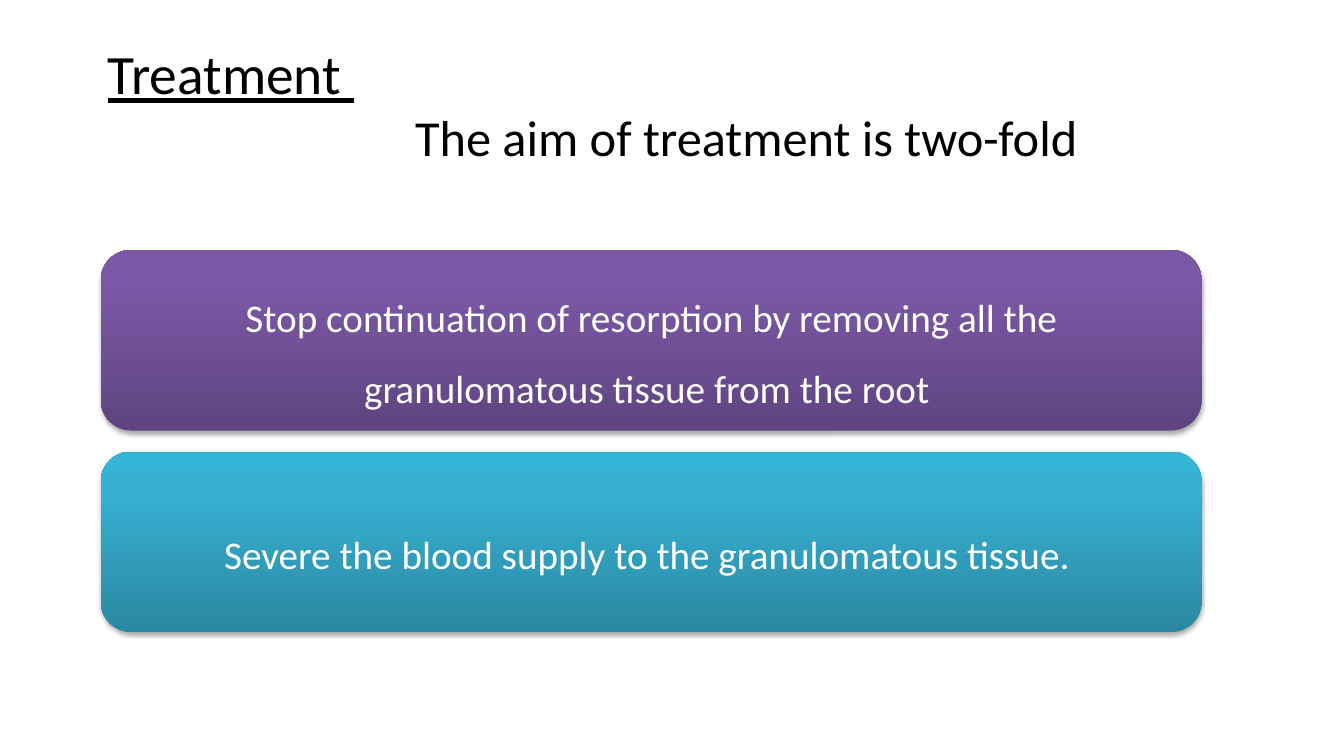
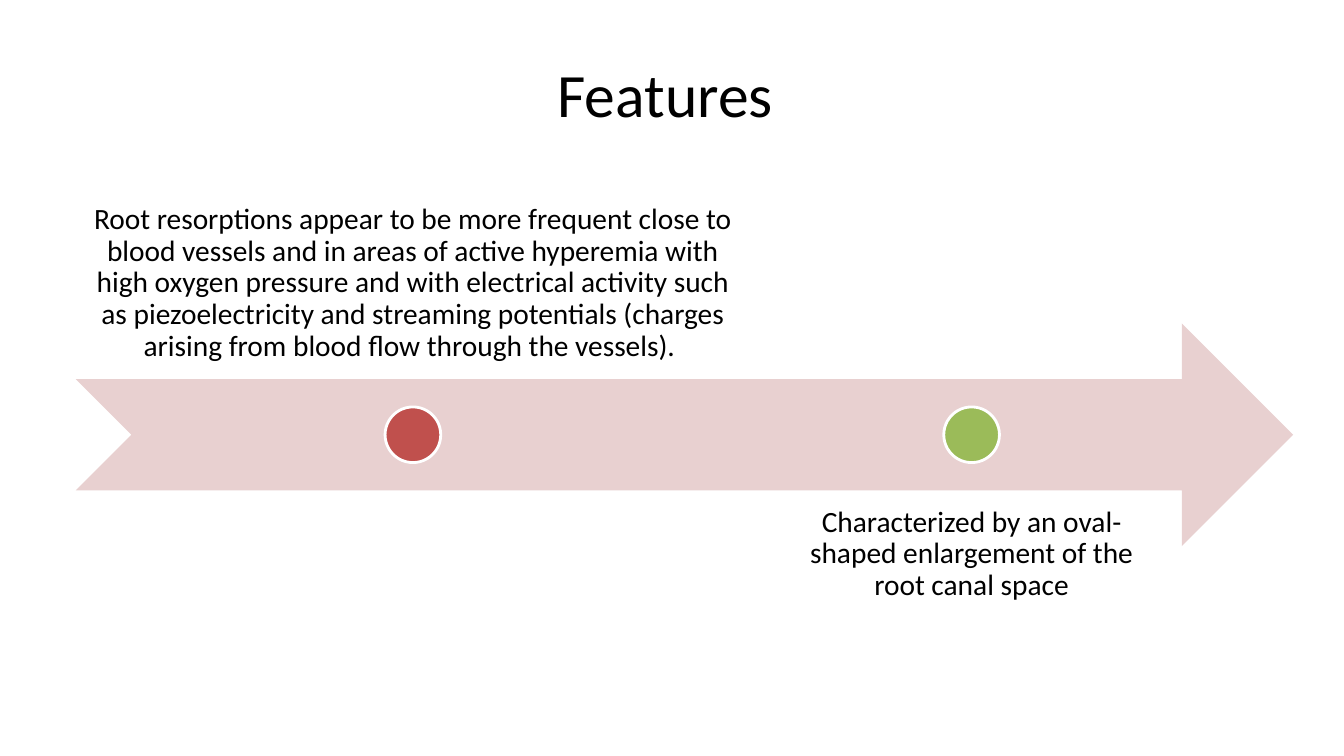
from copy import deepcopy

from lxml.etree import SubElement
from pptx import Presentation
from pptx.dml.color import RGBColor
from pptx.enum.shapes import MSO_SHAPE as Shape
from pptx.enum.text import MSO_ANCHOR as Anchor, PP_ALIGN as Align
from pptx.oxml.ns import qn
from pptx.util import Cm, Pt

FONT = "Calibri"
COLORS = {
    "text": "000000",
    "white": "FFFFFF",
    "arrow": "E8D0D0",
    "red": "C0504D",
    "green": "9BBB59",
}
GRADIENTS = {
    "purple": ((0, "5F4480"), (0.8, "7B58A6"), (1, "7C57A8")),
    "teal": ((0, "2A88A2"), (0.8, "37B1D2"), (1, "34B4D6")),
}


def rgb(name):
    """Return the palette colour with this name."""
    return RGBColor.from_string(COLORS[name])


def write(tf, text, size=21, color="text", align=Align.CENTER, anchor=Anchor.MIDDLE,
          spacing=None, inset=None, underline=None, wrap=True):
    """Put one formatted paragraph into a text frame."""
    tf.word_wrap = wrap
    tf.vertical_anchor = anchor
    if inset is not None:
        tf.margin_left = tf.margin_right = tf.margin_top = tf.margin_bottom = Cm(inset)
    p = tf.paragraphs[0]
    p.alignment = align
    p.line_spacing = spacing
    r = p.add_run()
    r.text = text
    r.font.name = FONT
    r.font.size = Pt(size)
    r.font.underline = underline
    r.font.color.rgb = rgb(color)


def add_text(slide, box, text, **fmt):
    """Add a text box at left, top, width, height in centimetres."""
    write(slide.shapes.add_textbox(*map(Cm, box)).text_frame, text, **fmt)


def add_shape(slide, kind, box, fill=None, line=None):
    """Add a shape without shadow, with an optional solid fill and outline."""
    sp = slide.shapes.add_shape(kind, *map(Cm, box))
    sp.shadow.inherit = False
    if fill:
        sp.fill.solid()
        sp.fill.fore_color.rgb = rgb(fill)
    if line:
        sp.line.color.rgb = rgb(line)
        sp.line.width = Pt(2)
    else:
        sp.line.fill.background()
    return sp


def fill_gradient(sp, stops):
    """Fill a shape with a three-stop gradient that runs upwards."""
    sp.fill.gradient()
    sp.fill.gradient_angle = 90
    gs_list = sp._element.spPr.find(qn("a:gradFill")).find(qn("a:gsLst"))
    gs_list.append(deepcopy(gs_list[0]))
    for stop, (position, color) in zip(sp.fill.gradient_stops, stops):
        stop.position = position
        stop.color.rgb = RGBColor.from_string(color)


def add_shadow(sp):
    """Give a shape a soft shadow straight below it."""
    effects = sp._element.spPr.find(qn("a:effectLst"))
    shadow = SubElement(effects, qn("a:outerShdw"), blurRad=str(Pt(3.1)),
                        dist=str(Pt(1.8)), dir="5400000", rotWithShape="0")
    color = SubElement(shadow, qn("a:srgbClr"), val=COLORS["text"])
    SubElement(color, qn("a:alpha"), val="35000")


def new_slide(prs, title, box, **fmt):
    """Add a slide with its title placed in the given box."""
    slide = prs.slides.add_slide(prs.slide_layouts[5])
    sp = slide.shapes.title
    sp.left, sp.top, sp.width, sp.height = map(Cm, box)
    write(sp.text_frame, title, **fmt)
    return slide


def add_cards(slide, box, cards, gap=0.53):
    """Stack equal rounded cards in the box."""
    left, top, width, height = box
    card_h = (height - gap * (len(cards) - 1)) / len(cards)
    for i, (gradient, text) in enumerate(cards):
        card = (left, top + i * (card_h + gap), width, card_h)
        sp = add_shape(slide, Shape.ROUNDED_RECTANGLE, card)
        fill_gradient(sp, GRADIENTS[gradient])
        add_shadow(sp)
        write(sp.text_frame, text, size=28, color="white", spacing=1.5, inset=0.3)


def add_timeline(slide, box, events):
    """Draw an arrow in the box with dots and texts alternately above and below."""
    left, top, width, height = box
    dot = height / 4
    add_shape(slide, Shape.NOTCHED_RIGHT_ARROW, box, fill="arrow")
    for i, (offset, text_w, color, text) in enumerate(events):
        x = left + offset
        above = i % 2 == 0
        text_top = top + dot - height if above else top + height - dot
        add_text(slide, (x, text_top, text_w, height), text, spacing=0.9, inset=0.41,
                 anchor=Anchor.BOTTOM if above else Anchor.TOP)
        add_shape(slide, Shape.OVAL,
                  (x + (text_w - dot) / 2, top + (height - dot) / 2, dot, dot),
                  fill=color, line="white")


def treatment_slide(prs):
    """Build the slide on the aims of treatment."""
    slide = new_slide(prs, "Treatment ", (1.47, 0.84, 8.69, 1.98), size=39.6, underline=True)
    add_cards(slide, (2.54, 6.3, 27.74, 9.63), (
        ("purple", "Stop continuation of resorption by removing all the "
                   "granulomatous tissue from the root "),
        ("teal", "Severe the blood supply to the granulomatous tissue. "),
    ))
    add_text(slide, (10.21, 2.54, 17.37, 1.8), "The aim of treatment is two-fold",
             size=36, align=Align.LEFT, anchor=Anchor.TOP, wrap=False)


def features_slide(prs):
    """Build the slide on the features of resorption."""
    slide = new_slide(prs, "Features ", (1.7, 0.76, 30.48, 3.18), size=44)
    add_timeline(slide, (1.91, 8.15, 30.68, 5.61), (
        (0, 16.99, "red",
         "Root resorptions appear to be more frequent close to blood vessels and in areas "
         "of active hyperemia with high oxygen pressure and with electrical activity such "
         "as piezoelectricity and streaming potentials (charges arising from blood flow "
         "through the vessels). "),
        (17.52, 10.11, "green",
         "Characterized by an oval-shaped enlargement of the root canal space"),
    ))


def main():
    """Build and save the presentation."""
    prs = Presentation()
    prs.slide_width, prs.slide_height = Cm(33.87), Cm(19.05)
    treatment_slide(prs)
    features_slide(prs)
    prs.save("out.pptx")


if __name__ == "__main__":
    main()
